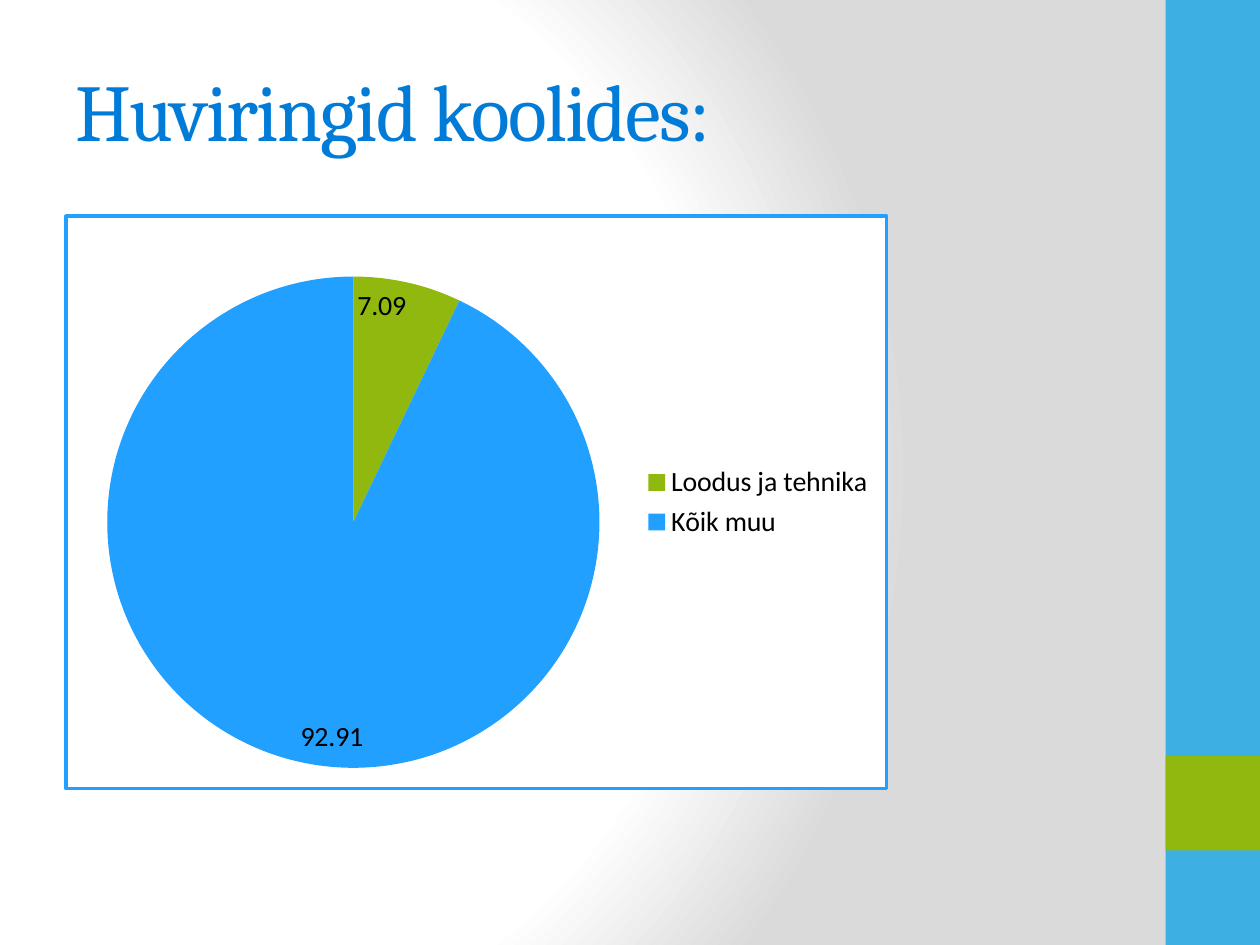
import pptx
import pptx.chart.data
import pptx.dml.color
import pptx.enum.chart
import pptx.enum.shapes
import pptx.enum.text
import pptx.oxml
import pptx.oxml.ns
import pptx.util

Cm, Pt = pptx.util.Cm, pptx.util.Pt
RGBColor = pptx.dml.color.RGBColor

WHITE = RGBColor(0xFF, 0xFF, 0xFF)
BLACK = RGBColor(0, 0, 0)
GREY = RGBColor(0xDA, 0xDA, 0xDA)
SKY = RGBColor(0x3E, 0xAF, 0xE2)
GREEN = RGBColor(0x90, 0xB8, 0x0E)
BLUE = RGBColor(0x21, 0xA0, 0xFF)
TITLE_BLUE = RGBColor(0x00, 0x7C, 0xD8)

TITLE = "Huviringid koolides:"
SLICES = [("Loodus ja tehnika", 7.09, GREEN), ("Kõik muu", 92.91, BLUE)]
BACKGROUND_STOPS = [(0, WHITE), (75, WHITE), (100, GREY)]

WIDTH, HEIGHT = 25.4, 19.05
BAND = WIDTH * 0.075
BANDS = [(0, HEIGHT, SKY), (HEIGHT * 0.8, BAND, GREEN)]
PLOT_AREA = {"x": 0.05, "y": 0.1, "w": 0.6, "h": 0.87}

A = pptx.oxml.ns.nsdecls("a")
C = pptx.oxml.ns.nsdecls("c")


def paint_background(page):
    """Fill the page with a circular gradient centred on the left."""
    page.background.fill.gradient()
    gradient = page.element.find(".//" + pptx.oxml.ns.qn("a:gradFill"))
    stops = "".join(
        f'<a:gs pos="{position * 1000}"><a:srgbClr val="{color}"/></a:gs>'
        for position, color in BACKGROUND_STOPS
    )
    radial = pptx.oxml.parse_xml(
        f'<a:gradFill {A} rotWithShape="1"><a:gsLst>{stops}</a:gsLst>'
        '<a:path path="circle"><a:fillToRect l="20000" t="50000" r="100000" b="50000"/>'
        "</a:path></a:gradFill>"
    )
    gradient.getparent().replace(gradient, radial)


def add_band(page, top, height, color):
    band = page.shapes.add_shape(
        pptx.enum.shapes.MSO_SHAPE.RECTANGLE,
        Cm(WIDTH - BAND), Cm(top), Cm(BAND), Cm(height),
    )
    band.shadow.inherit = False
    band.fill.solid()
    band.fill.fore_color.rgb = color
    band.line.fill.background()


def add_text(page, text, left, top, width, height, *, font, size, color, spacing=0):
    box = page.shapes.add_textbox(Cm(left), Cm(top), Cm(width), Cm(height))
    frame = box.text_frame
    frame.word_wrap = True
    frame.vertical_anchor = pptx.enum.text.MSO_ANCHOR.MIDDLE
    span = frame.paragraphs[0].add_run()
    span.text = text
    span.font.name = font
    span.font.size = Pt(size)
    span.font.color.rgb = color
    span.font._element.set("spc", str(spacing * 100))


def frame_chart(chart):
    """Give the chart a white ground, a blue border and a fixed plot area."""
    border = pptx.oxml.parse_xml(
        f'<c:spPr {C} {A}><a:solidFill><a:srgbClr val="{WHITE}"/></a:solidFill>'
        f'<a:ln w="{Pt(2)}"><a:solidFill><a:srgbClr val="{BLUE}"/></a:solidFill></a:ln></c:spPr>'
    )
    chart.element.chart.addnext(border)
    sizes = "".join(f'<c:{key} val="{value}"/>' for key, value in PLOT_AREA.items())
    layout = pptx.oxml.parse_xml(
        f'<c:layout {C}><c:manualLayout><c:layoutTarget val="inner"/>'
        f'<c:xMode val="edge"/><c:yMode val="edge"/>{sizes}</c:manualLayout></c:layout>'
    )
    plot_area = chart.element.chart.plotArea
    for automatic in plot_area.findall(pptx.oxml.ns.qn("c:layout")):
        plot_area.remove(automatic)
    plot_area.insert(0, layout)


def add_pie(page, left, top, width, height):
    names, values, colors = zip(*SLICES)
    data = pptx.chart.data.CategoryChartData(number_format="0.00")
    data.categories = names
    data.add_series("Series 1", values)
    chart = page.shapes.add_chart(
        pptx.enum.chart.XL_CHART_TYPE.PIE,
        Cm(left), Cm(top), Cm(width), Cm(height), data,
    ).chart
    chart.has_title = False
    chart.font.name = "Calibri"
    chart.font.size = Pt(16)
    chart.font.color.rgb = BLACK

    chart.has_legend = True
    chart.legend.position = pptx.enum.chart.XL_LEGEND_POSITION.RIGHT
    chart.legend.include_in_layout = False

    plot = chart.plots[0]
    plot.vary_by_categories = True
    plot.has_data_labels = True
    labels = plot.data_labels
    labels.show_value = True
    labels.show_percentage = False
    labels.number_format = "0.00"
    labels.number_format_is_linked = False
    labels.position = pptx.enum.chart.XL_LABEL_POSITION.INSIDE_END
    for index, color in enumerate(colors):
        fill = plot.series[0].points[index].format.fill
        fill.solid()
        fill.fore_color.rgb = color
    frame_chart(chart)


def main():
    deck = pptx.Presentation()
    deck.slide_width, deck.slide_height = Cm(WIDTH), Cm(HEIGHT)
    page = deck.slides.add_slide(deck.slide_layouts[6])
    paint_background(page)
    for top, height, color in BANDS:
        add_band(page, top, height, color)
    add_text(page, TITLE, 1.27, 0.76, 21.16, 2.87,
             font="Cambria", size=46, color=TITLE_BLUE, spacing=-1)
    add_pie(page, 1.3, 4.32, 16.61, 11.61)
    deck.save("out.pptx")


if __name__ == "__main__":
    main()
